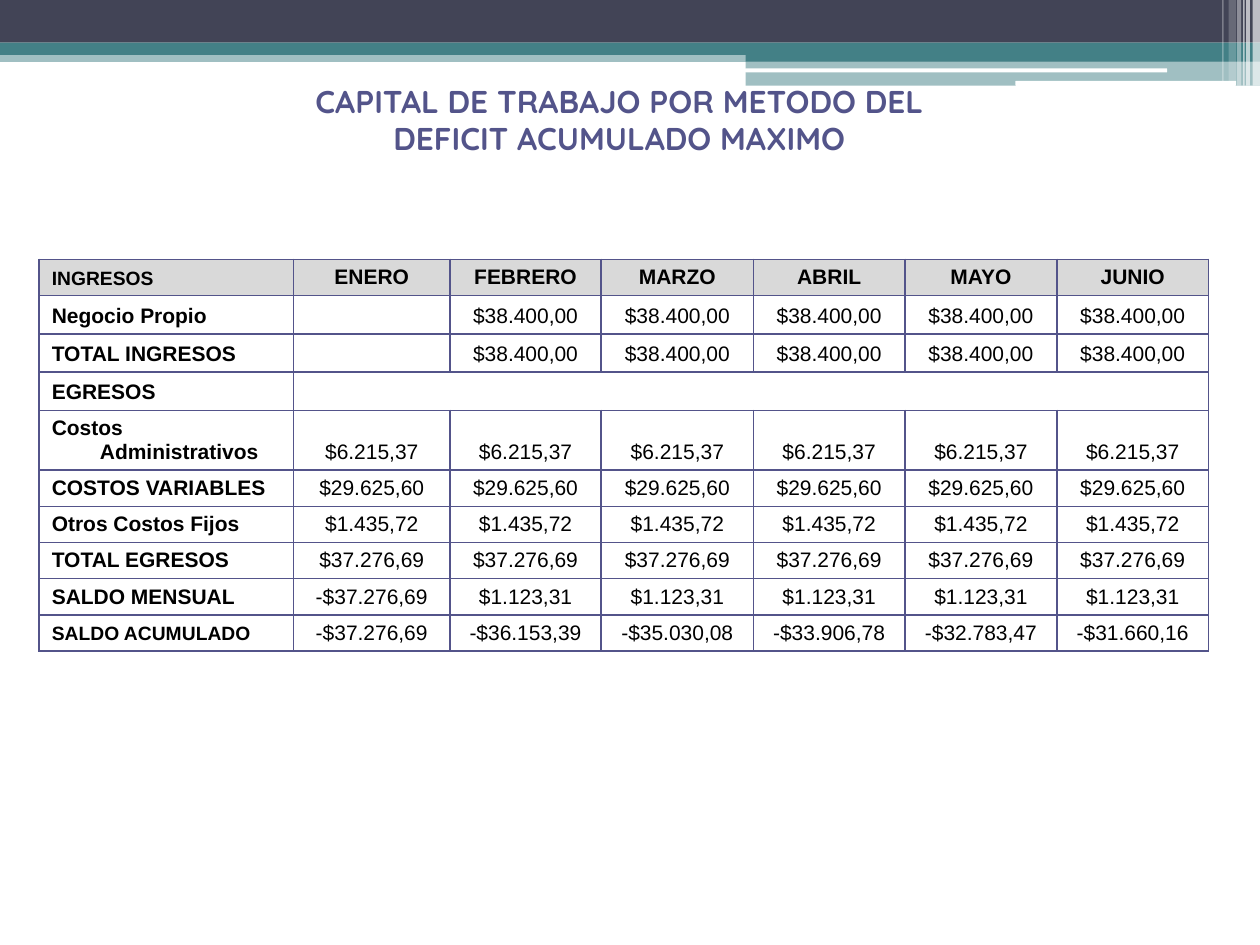
from lxml.etree import SubElement
from pptx import Presentation
from pptx.dml.color import RGBColor
from pptx.enum.shapes import MSO_SHAPE as Shape
from pptx.enum.text import MSO_ANCHOR as Anchor, PP_ALIGN as Align
from pptx.oxml.ns import qn
from pptx.util import Cm, Pt

NAVY, TEAL, WHITE, INDIGO, GREY, BLACK = (
    "424456", "438086", "FFFFFF", "53548A", "D9D9D9", "000000")

# left, top, width, height (cm), colour, opacity in percent
BANDS = [
    (0, 1.02, 25.4, 0.23, TEAL, 50),
    (0, 0, 25.4, 0.86, NAVY, 100),
    (0, 0.86, 25.4, 0.25, TEAL, 100),
    (15.03, 0.99, 10.37, 0.25, TEAL, 100),
    (15.03, 1.23, 10.37, 0.5, TEAL, 50),
]
ROUNDED_LINES = [(15.02, 1.38, 8.51, 0.08), (20.47, 1.63, 4.45, 0.1)]
# left, width, height (cm), opacity in percent
STRIPES = [
    (25.25, 0.15, 1.73, 65), (25.12, 0.08, 1.73, 65), (25.06, 0.03, 1.73, 60),
    (24.94, 0.08, 1.73, 40), (24.77, 0.15, 1.63, 20), (24.64, 0.03, 1.63, 30),
]

MONTHS = ["ENERO", "FEBRERO", "MARZO", "ABRIL", "MAYO", "JUNIO"]
INCOME = [""] + ["$38.400,00"] * 5
ROWS = [
    ("INGRESOS", MONTHS),
    ("Negocio Propio", INCOME),
    ("TOTAL INGRESOS", INCOME),
    ("EGRESOS", [""] * 6),
    ("Costos Administrativos", ["$6.215,37"] * 6),
    ("COSTOS VARIABLES", ["$29.625,60"] * 6),
    ("Otros Costos Fijos", ["$1.435,72"] * 6),
    ("TOTAL EGRESOS", ["$37.276,69"] * 6),
    ("SALDO MENSUAL", ["-$37.276,69"] + ["$1.123,31"] * 5),
    ("SALDO ACUMULADO", ["-$37.276,69", "-$36.153,39", "-$35.030,08",
                         "-$33.906,78", "-$32.783,47", "-$31.660,16"]),
]
COLUMN_WIDTHS = [5.13, 3.15, 3.05, 3.07, 3.05, 3.07, 3.05]
ROW_HEIGHT = 0.73
TALL_ROWS = {"Negocio Propio": 0.76, "Costos Administrativos": 1.19}
SMALL_LABELS = {"INGRESOS", "SALDO ACUMULADO"}


def rgb(colour):
    return RGBColor.from_string(colour)


def add_span(para, text, colour, **formats):
    span = para.add_run()
    span.text = text
    for name, value in formats.items():
        setattr(span.font, name, value)
    span.font.color.rgb = rgb(colour)


def add_bar(page, box, colour, opacity=100, kind=Shape.RECTANGLE):
    bar = page.shapes.add_shape(kind, *map(Cm, box))
    bar.shadow.inherit = False
    bar.line.fill.background()
    bar.fill.solid()
    bar.fill.fore_color.rgb = rgb(colour)
    if opacity < 100:
        fill_colour = bar.fill._xPr.find(".//" + qn("a:srgbClr"))
        SubElement(fill_colour, qn("a:alpha"), val=str(opacity * 1000))


def add_header(page, left, top):
    for x, y, width, height, colour, opacity in BANDS:
        add_bar(page, (left + x, top + y, width, height), colour, opacity)
    for x, y, width, height in ROUNDED_LINES:
        add_bar(page, (left + x, top + y, width, height), WHITE,
                kind=Shape.ROUNDED_RECTANGLE)
    for x, width, height, opacity in STRIPES:
        add_bar(page, (left + x, top, width, height), WHITE, opacity)


def add_title(page, left, top, width, height):
    box = page.shapes.add_textbox(*map(Cm, (left, top, width, height)))
    box.text_frame.word_wrap = True
    para = box.text_frame.paragraphs[0]
    para.alignment = Align.CENTER
    add_span(para, "CAPITAL DE TRABAJO POR METODO DEL DEFICIT ACUMULADO MAXIMO",
             INDIGO, name="Quicksand", size=Pt(18), bold=True)


def add_borders(cell):
    """Draw the four edges; they must come before the cell's fill."""
    properties = cell._tc.get_or_add_tcPr()
    for edge in ("a:lnL", "a:lnR", "a:lnT", "a:lnB"):
        line = SubElement(properties, qn(edge), w=str(Pt(1)))
        fill = SubElement(line, qn("a:solidFill"))
        SubElement(fill, qn("a:srgbClr"), val=INDIGO)


def fill_cell(cell, text, size, bold, alignment, background):
    add_borders(cell)
    if background:
        cell.fill.solid()
        cell.fill.fore_color.rgb = rgb(background)
    else:
        cell.fill.background()
    cell.vertical_anchor = Anchor.BOTTOM
    para = cell.text_frame.paragraphs[0]
    para.alignment = alignment
    if text:
        hanging = para._p.get_or_add_pPr()
        hanging.set("marL", str(Cm(0.97)))
        hanging.set("indent", str(Cm(-0.97)))
        add_span(para, text, BLACK, name="Arial", size=Pt(size), bold=bold)
    else:
        SubElement(para._p, qn("a:endParaRPr"), sz=str(size * 100))


def add_cash_table(page, left, top):
    heights = [TALL_ROWS.get(label, ROW_HEIGHT) for label, _ in ROWS]
    frame = page.shapes.add_table(
        len(ROWS), len(COLUMN_WIDTHS), Cm(left), Cm(top),
        Cm(sum(COLUMN_WIDTHS)), Cm(sum(heights)))
    table = frame.table
    table.first_row = table.horz_banding = False
    for column, width in zip(table.columns, COLUMN_WIDTHS):
        column.width = Cm(width)
    for index, (label, values) in enumerate(ROWS):
        table.rows[index].height = Cm(heights[index])
        background = GREY if index == 0 else None
        label_size = 11 if label in SMALL_LABELS else 12
        fill_cell(table.cell(index, 0), label, label_size, True,
                  Align.LEFT, background)
        for column, value in enumerate(values, start=1):
            fill_cell(table.cell(index, column), value, 12, index == 0,
                      Align.CENTER, background)
        if not any(values):
            table.cell(index, 1).merge(table.cell(index, len(values)))


def main():
    deck = Presentation()
    deck.slide_width, deck.slide_height = Cm(25.4), Cm(19.05)
    page = deck.slides.add_slide(deck.slide_layouts[6])
    page.background.fill.solid()
    page.background.fill.fore_color.rgb = rgb(WHITE)
    add_header(page, 0, 0)
    add_cash_table(page, 0.79, 5.23)
    add_title(page, 5.31, 1.52, 14.35, 1.8)
    deck.save("out.pptx")


if __name__ == "__main__":
    main()
